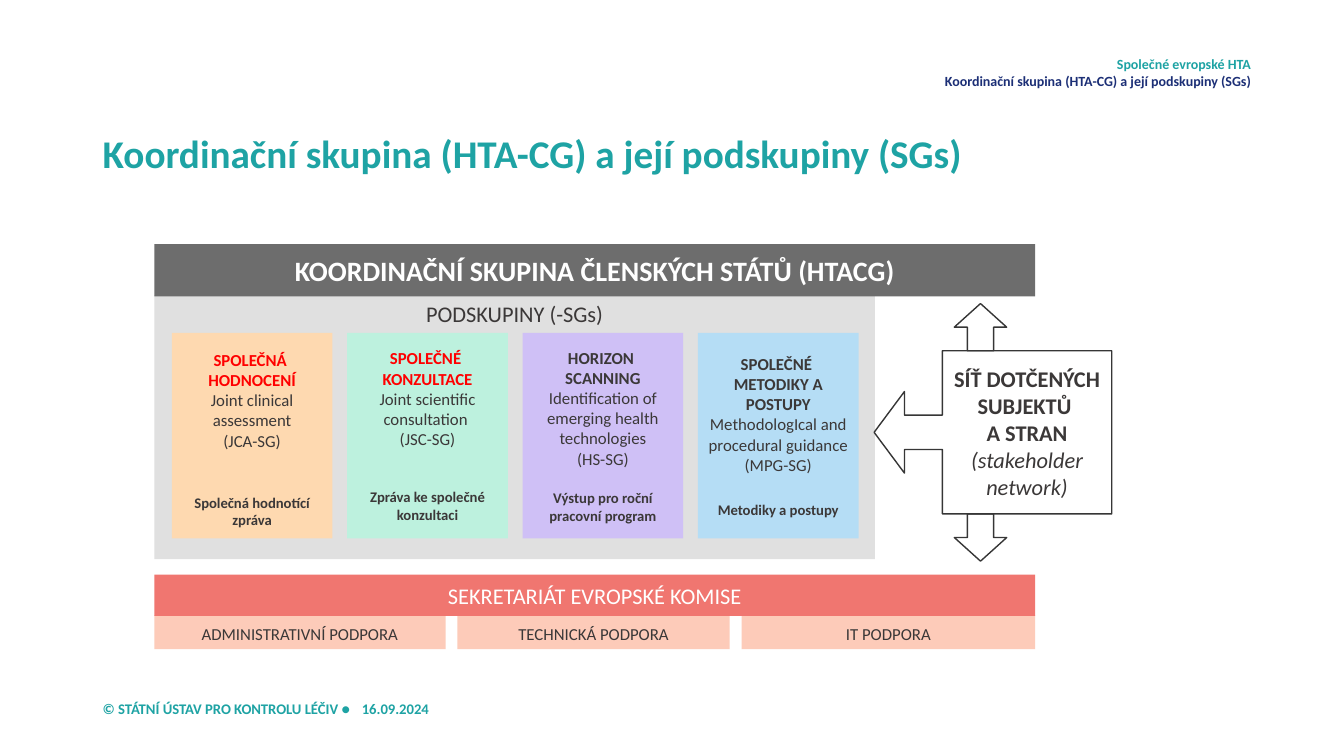
from dataclasses import dataclass
from pptx import Presentation
from pptx.dml.color import RGBColor
from pptx.enum.shapes import MSO_SHAPE as Shape
from pptx.enum.text import MSO_ANCHOR as Anchor, PP_ALIGN as Align
from pptx.util import Cm, Pt


@dataclass(frozen=True)
class Theme:
    font: str = "Calibri"
    teal: str = "1EA3A4"
    navy: str = "1C2F76"
    ink: str = "3B3838"
    outline: str = "363636"
    white: str = "FFFFFF"
    red: str = "FF0000"
    dark_grey: str = "6D6D6D"
    light_grey: str = "E0E0E0"
    coral: str = "F07670"
    blush: str = "FDCBB9"
    title: float = 28
    banner: float = 20
    heading: float = 16
    body: float = 12
    small: float = 10.5
    header: float = 10


THEME = Theme()

# Heading, heading colour, description, code, output, gap before output, top offset, fill
SUBGROUPS = [
    ("SPOLEČNÁ \nHODNOCENÍ", THEME.red, "Joint clinical assessment", "(JCA-SG)",
     "Společná hodnotící zpráva", 30.8, 0.17, "FED9B0"),
    ("SPOLEČNÉ \nKONZULTACE", THEME.red, "Joint scientific consultation ", "(JSC-SG)",
     "Zpráva ke společné konzultaci", 28.1, 0, "BDF1DE"),
    ("HORIZON \nSCANNING", THEME.ink, "Identification of emerging health technologies",
     "(HS-SG)", "Výstup pro roční pracovní program", 14.6, 0, "CFC0F6"),
    ("SPOLEČNÉ \nMETODIKY A POSTUPY", THEME.ink, "MethodologIcal and procedural guidance",
     "(MPG-SG)", "Metodiky a postupy", 18.4, 0, "B5DDF5"),
]
SUPPORTS = [("ADMINISTRATIVNÍ PODPORA", 7.34), ("TECHNICKÁ PODPORA", 6.86), ("IT PODPORA", 7.4)]


def add_text(frame, text, para=None, size=THEME.body, color=THEME.ink, bold=False,
             italic=False, align=Align.CENTER, before=0, spacing=None):
    """Write text into the given paragraph, or into the next one of the frame."""
    if para is None:
        first = frame.paragraphs[0]
        para = frame.add_paragraph() if first.runs else first
        para.alignment = align
        if before:
            para.space_before = Pt(before)
        if spacing:
            para.line_spacing = spacing
    for index, line in enumerate(text.split("\n")):
        if index:
            para.add_line_break()
        span = para.add_run()
        span.text = line
        font = span.font
        font.name, font.size, font.bold, font.italic = THEME.font, Pt(size), bold, italic
        font.color.rgb = RGBColor.from_string(color)
    return para


def add_box(page, left, top, width, height, fill=None, kind=Shape.RECTANGLE, anchor=Anchor.MIDDLE):
    """Add a filled shape, or an outlined one when no fill is given."""
    box = page.shapes.add_shape(kind, Cm(left), Cm(top), Cm(width), Cm(height))
    box.shadow.inherit = False
    if fill:
        box.fill.solid()
        box.fill.fore_color.rgb = RGBColor.from_string(fill)
        box.line.fill.background()
    else:
        box.fill.background()
        box.line.color.rgb = RGBColor.from_string(THEME.outline)
        box.line.width = Pt(1)
    box.text_frame.word_wrap = True
    box.text_frame.vertical_anchor = anchor
    return box


def add_label(page, left, top, width, height, text, anchor=Anchor.TOP, inset=True, **style):
    """Add a plain text box with one line of text."""
    label = page.shapes.add_textbox(Cm(left), Cm(top), Cm(width), Cm(height))
    frame = label.text_frame
    frame.word_wrap = True
    frame.vertical_anchor = anchor
    if not inset:
        frame.margin_left = frame.margin_right = frame.margin_top = frame.margin_bottom = 0
    add_text(frame, text, **{"align": Align.LEFT, "bold": True, "color": THEME.teal, **style})


def add_header(page, left, top, width):
    lines = [("Společné evropské HTA", THEME.teal),
             ("Koordinační skupina (HTA-CG) a její podskupiny (SGs)", THEME.navy)]
    for row, (text, color) in enumerate(lines):
        add_label(page, left, top + row * 0.43, width, 0.43, text, inset=False,
                  size=THEME.header, color=color, align=Align.RIGHT)


def add_footer(page, left, top, height):
    add_label(page, left, top, 7.01, height, "© STÁTNÍ ÚSTAV PRO KONTROLU LÉČIV ●",
              size=THEME.small)
    add_label(page, left + 6.53, top, 2.92, height, "16.09.2024", size=THEME.small,
              anchor=Anchor.MIDDLE)


def add_card(page, left, top, width, height, subgroup):
    heading, color, description, code, output, gap, offset, fill = subgroup
    frame = add_box(page, left, top, width, height, fill).text_frame
    frame.margin_top = Cm(0.13 + offset)
    add_text(frame, heading, color=color, bold=True)
    add_text(frame, description)
    add_text(frame, code)
    add_text(frame, output, size=THEME.small, bold=True, before=gap)


def add_coordination_group(page, left, top, width):
    # Panel with the four subgroups
    panel = add_box(page, left, top + 1.29, 18.16, 6.65, THEME.light_grey, anchor=Anchor.TOP)
    add_text(panel.text_frame, "PODSKUPINY (-SGs)", size=THEME.heading)
    for column, subgroup in enumerate(SUBGROUPS):
        add_card(page, left + 0.44 + column * 4.42, top + 2.24, 4.05, 5.18, subgroup)
    # Banner across the top
    banner = add_box(page, left, top, width, 1.32, THEME.dark_grey)
    add_text(banner.text_frame, "KOORDINAČNÍ SKUPINA ČLENSKÝCH STÁTŮ (HTACG)",
             size=THEME.banner, color=THEME.white, bold=True)


def add_stakeholders(page, left, top, width, height):
    # Box pointing left at the panel
    callout = add_box(page, left, top, width, height, kind=Shape.RIGHT_ARROW_CALLOUT)
    callout.element.spPr.xfrm.set("flipH", "1")
    for index, value in enumerate([0.211, 0.25, 0.186, 0.713]):
        callout.adjustments[index] = value
    frame = callout.text_frame
    para = add_text(frame, "SÍŤ DOTČENÝCH SUBJEKTŮ \nA STRAN ", size=THEME.heading, bold=True)
    add_text(frame, "(stakeholder network)", para=para, size=THEME.heading, italic=True)
    # Arrows up to the group and down to the secretariat
    for arrow_top, angle in [(top - 1.19, 0), (top + height, 180)]:
        arrow = add_box(page, left + 2.02, arrow_top, 1.32, 1.19, kind=Shape.UP_ARROW)
        arrow.rotation = angle


def add_secretariat(page, left, top, width):
    support_left = left
    for text, support_width in SUPPORTS:
        support = add_box(page, support_left, top + 1.02, support_width, 0.86, THEME.blush)
        support.text_frame.margin_top = Cm(0.23)
        add_text(support.text_frame, text)
        support_left += support_width + 0.3
    bar = add_box(page, left, top, width, 1.04, THEME.coral)
    add_text(bar.text_frame, "SEKRETARIÁT EVROPSKÉ KOMISE", size=THEME.heading, color=THEME.white)


def main():
    deck = Presentation()
    deck.slide_width, deck.slide_height = Cm(33.87), Cm(19.05)
    page = deck.slides.add_slide(deck.slide_layouts[6])
    add_header(page, 17.42, 1.4, 14.1)
    add_label(page, 2.34, 3.15, 29.2, 1.55, "Koordinační skupina (HTA-CG) a její podskupiny (SGs)",
              size=THEME.title, anchor=Anchor.MIDDLE, spacing=0.9)
    add_coordination_group(page, 3.89, 6.15, 22.2)
    add_stakeholders(page, 22.03, 8.84, 5.99, 4.11)
    add_secretariat(page, 3.89, 14.48, 22.2)
    add_footer(page, 2.34, 17.5, 0.71)
    deck.save("out.pptx")


if __name__ == "__main__":
    main()
